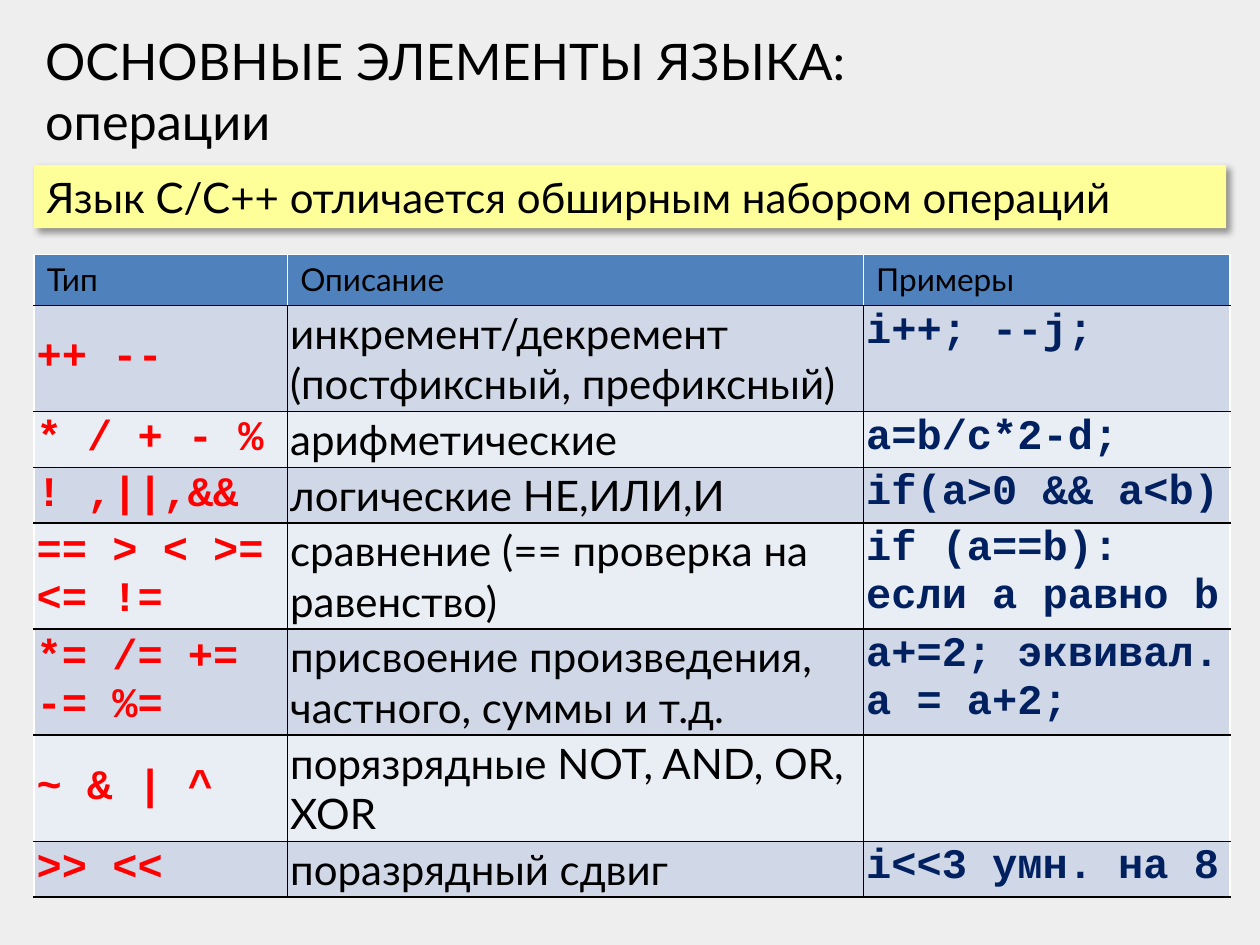
from dataclasses import dataclass

from lxml.etree import SubElement
from pptx import Presentation
from pptx.dml.color import RGBColor
from pptx.enum.shapes import MSO_SHAPE
from pptx.enum.text import MSO_ANCHOR, PP_ALIGN
from pptx.oxml import parse_xml
from pptx.oxml.ns import nsdecls, qn
from pptx.util import Cm, Pt


@dataclass(frozen=True)
class Theme:
    background: str = "EEEEEE"
    banner: str = "FFFF99"
    header: str = "4F81BD"
    bands: tuple = ("D0D8E8", "E9EDF4")
    text: str = "000000"
    operator: str = "FF0000"
    example: str = "002060"
    light_line: str = "FFFFFF"
    dark_line: str = "000000"
    body_font: str = "Lato"
    code_font: str = "Courier New"
    title_size: float = 28.8
    body_size: float = 24
    header_size: float = 18


THEME = Theme()

HEADINGS = ("Тип", "Описание", "Примеры")
OPERATIONS = (
    ("++ --", "инкремент/декремент (постфиксный, префиксный)", "i++; --j;"),
    ("* / + - %", "арифметические", "a=b/c*2-d;"),
    ("! ,||,&&", "логические НЕ,ИЛИ,И", "if(a>0 && a<b)"),
    ("== > < >= <= !=", "сравнение (== проверка на равенство)",
     "if (a==b): если a равно b"),
    ("*= /= += -= %=", "присвоение произведения, частного, суммы и т.д.",
     "a+=2; эквивал. a = a+2;"),
    ("~ & | ^", "порязрядные NOT, AND, OR, XOR", ""),
    (">> <<", "поразрядный сдвиг", "i<<3 умн. на 8"),
)
COLUMN_WIDTHS = (5.11, 11.61, 7.39)
HEADER_HEIGHT, SINGLE_HEIGHT, DOUBLE_HEIGHT = 1.03, 1.12, 2.14
TWO_LINE_ROWS = (1, 4, 5, 6)


def color(value):
    return RGBColor.from_string(value)


def write(frame, text, size, font=THEME.body_font, ink=THEME.text, bold=False):
    frame.text = text
    frame.word_wrap = True
    for para in frame.paragraphs:
        para.alignment = PP_ALIGN.LEFT
        for span in para.runs:
            span.font.size = Pt(size)
            span.font.name = font
            span.font.bold = bold
            span.font.color.rgb = color(ink)


def add_title(page):
    box = page.shapes.add_textbox(Cm(0.66), Cm(0.53), Cm(23.8), Cm(2.64))
    box.text_frame.vertical_anchor = MSO_ANCHOR.BOTTOM
    write(box.text_frame, "ОСНОВНЫЕ ЭЛЕМЕНТЫ ЯЗЫКА:\vоперации", THEME.title_size)


def add_soft_shadow(shape):
    """Cast a blurred shadow down and to the right."""
    shape.shadow.inherit = False
    effects = shape._element.spPr.find(qn("a:effectLst"))
    shadow = SubElement(effects, qn("a:outerShdw"), blurRad=str(Pt(4)),
                        dist=str(Pt(3)), dir="2700000", algn="tl", rotWithShape="0")
    tint = SubElement(shadow, qn("a:srgbClr"), val=THEME.text)
    SubElement(tint, qn("a:alpha"), val="40000")


def add_banner(page):
    banner = page.shapes.add_shape(
        MSO_SHAPE.RECTANGLE, Cm(0.69), Cm(3.33), Cm(24.03), Cm(1.27))
    banner.fill.solid()
    banner.fill.fore_color.rgb = color(THEME.banner)
    banner.line.fill.background()
    add_soft_shadow(banner)
    banner.text_frame.vertical_anchor = MSO_ANCHOR.MIDDLE
    write(banner.text_frame, "Язык C/C++ отличается обширным набором операций",
          THEME.body_size)


def fill_cell(cell, value):
    cell.fill.solid()
    cell.fill.fore_color.rgb = color(value)


def set_borders(cell, left, right, top, bottom):
    """Put the four edges ahead of the fill, as the schema orders them."""
    properties = cell._tc.get_or_add_tcPr()
    edges = {"lnL": left, "lnR": right, "lnT": top, "lnB": bottom}
    for position, (tag, value) in enumerate(edges.items()):
        properties.insert(position, parse_xml(
            f'<a:{tag} {nsdecls("a")} w="{Pt(1)}"><a:solidFill>'
            f'<a:srgbClr val="{value}"/></a:solidFill></a:{tag}>'))


def format_header(table):
    light, dark = THEME.light_line, THEME.dark_line
    for column, heading in enumerate(HEADINGS):
        cell = table.cell(0, column)
        write(cell.text_frame, heading, THEME.header_size)
        fill_cell(cell, THEME.header)
        set_borders(cell, light, light, light, dark)


def format_operation(table, row, texts):
    light, dark = THEME.light_line, THEME.dark_line
    styles = (
        (THEME.code_font, THEME.operator, True),
        (THEME.body_font, THEME.text, False),
        (THEME.code_font, THEME.example, True),
    )
    for column, (text, style) in enumerate(zip(texts, styles)):
        cell = table.cell(row, column)
        cell.margin_left = cell.margin_right = Cm(0.05)
        cell.margin_top = cell.margin_bottom = Cm(0.05)
        cell.vertical_anchor = MSO_ANCHOR.TOP if column else MSO_ANCHOR.MIDDLE
        write(cell.text_frame, text, THEME.body_size, *style)
        fill_cell(cell, THEME.bands[(row - 1) % 2])
        set_borders(cell, dark if column else light,
                    light if column == 2 else dark, dark, dark)


def add_operations_table(page):
    heights = [HEADER_HEIGHT] + [
        DOUBLE_HEIGHT if row in TWO_LINE_ROWS else SINGLE_HEIGHT
        for row in range(1, len(OPERATIONS) + 1)]
    table = page.shapes.add_table(
        len(heights), len(COLUMN_WIDTHS), Cm(0.69), Cm(5.13),
        Cm(sum(COLUMN_WIDTHS)), Cm(sum(heights))).table
    for column, width in zip(table.columns, COLUMN_WIDTHS):
        column.width = Cm(width)
    for row, height in zip(table.rows, heights):
        row.height = Cm(height)
    format_header(table)
    for row, texts in enumerate(OPERATIONS, start=1):
        format_operation(table, row, texts)


def main():
    deck = Presentation()
    deck.slide_width, deck.slide_height = Cm(25.4), Cm(19.05)
    page = deck.slides.add_slide(deck.slide_layouts[6])
    page.background.fill.solid()
    page.background.fill.fore_color.rgb = color(THEME.background)
    add_title(page)
    add_banner(page)
    add_operations_table(page)
    deck.save("out.pptx")


if __name__ == "__main__":
    main()
